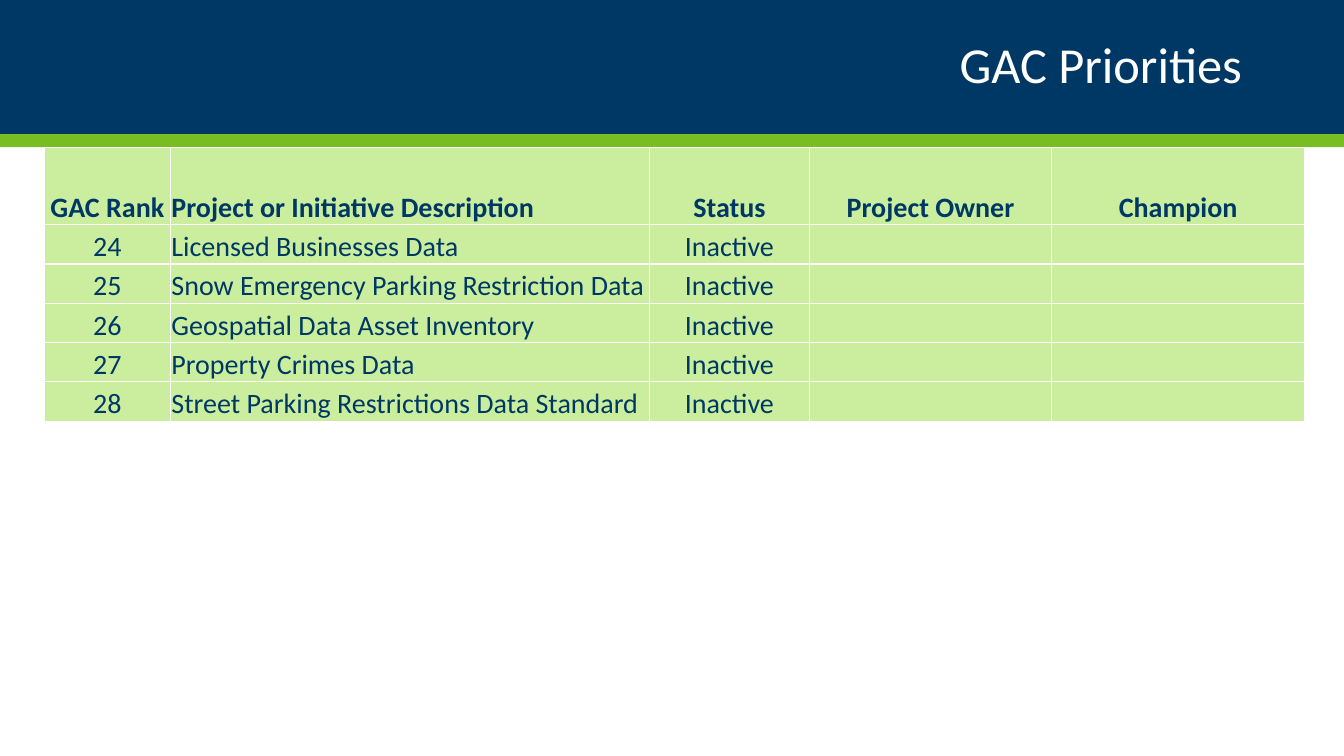
from lxml import etree
from pptx import Presentation
from pptx.dml.color import RGBColor
from pptx.enum.shapes import MSO_SHAPE
from pptx.enum.text import MSO_ANCHOR, PP_ALIGN
from pptx.oxml.ns import qn
from pptx.util import Inches, Pt

RECTANGLE = MSO_SHAPE.RECTANGLE
MIDDLE, BOTTOM = MSO_ANCHOR.MIDDLE, MSO_ANCHOR.BOTTOM
LEFT, CENTER, RIGHT = PP_ALIGN.LEFT, PP_ALIGN.CENTER, PP_ALIGN.RIGHT

NAVY, GREEN, PALE_GREEN, WHITE = "003865", "78BE21", "CAEE9D", "FFFFFF"
FONT = "Calibri"
SLIDE_WIDTH = 13.33
TITLE_ONLY_LAYOUT = 5

HEADERS = ["GAC Rank", "Project or Initiative Description", "Status", "Project Owner", "Champion"]
FIRST_RANK = 24
PROJECTS = [
    "Licensed Businesses Data",
    "Snow Emergency Parking Restriction Data",
    "Geospatial Data Asset Inventory",
    "Property Crimes Data",
    "Street Parking Restrictions Data Standard",
]
COLUMN_WIDTHS = [1.25, 4.75, 1.59, 2.4, 2.51]
HEADER_HEIGHT, ROW_HEIGHT = 0.77, 0.39
DESCRIPTION_COLUMN = 1


def rgb(color):
    return RGBColor.from_string(color)


def format_paragraph(paragraph, size, color, alignment, bold=False):
    paragraph.alignment = alignment
    for run in paragraph.runs:
        run.font.name = FONT
        run.font.size = Pt(size)
        run.font.bold = bold
        run.font.color.rgb = rgb(color)


def add_title(slide, text):
    title = slide.shapes.title
    title.left, title.top = Inches(0.92), Inches(0.17)
    title.width, title.height = Inches(11.5), Inches(1)
    title.text_frame.text = text
    title.text_frame.vertical_anchor = MIDDLE
    paragraph = title.text_frame.paragraphs[0]
    paragraph.line_spacing = 0.9
    format_paragraph(paragraph, 36, WHITE, RIGHT)


def add_band(slide, top, height, color):
    band = slide.shapes.add_shape(RECTANGLE, 0, Inches(top), Inches(SLIDE_WIDTH), Inches(height))
    band.shadow.inherit = False
    band.fill.solid()
    band.fill.fore_color.rgb = rgb(color)
    band.line.fill.background()
    slide.shapes.title.element.addprevious(band.element)


def add_borders(cell, color, width):
    properties = cell._tc.get_or_add_tcPr()
    for side in ("lnL", "lnR", "lnT", "lnB"):
        line = etree.SubElement(properties, qn(f"a:{side}"), w=str(Pt(width)))
        fill = etree.SubElement(line, qn("a:solidFill"))
        etree.SubElement(fill, qn("a:srgbClr"), val=color)


def format_cell(cell, text, alignment, bold):
    cell.text_frame.text = text
    format_paragraph(cell.text_frame.paragraphs[0], 20, NAVY, alignment, bold)
    cell.vertical_anchor = BOTTOM
    cell.margin_left = cell.margin_right = cell.margin_top = Inches(0.01)
    cell.margin_bottom = 0
    add_borders(cell, WHITE, 1)
    cell.fill.solid()
    cell.fill.fore_color.rgb = rgb(PALE_GREEN)


def add_priority_table(slide, rows):
    heights = [HEADER_HEIGHT] + [ROW_HEIGHT] * (len(rows) - 1)
    table = slide.shapes.add_table(
        len(rows), len(COLUMN_WIDTHS), Inches(0.44), Inches(1.46),
        Inches(sum(COLUMN_WIDTHS)), Inches(sum(heights)),
    ).table
    for column, width in zip(table.columns, COLUMN_WIDTHS):
        column.width = Inches(width)
    for row_index, (values, height) in enumerate(zip(rows, heights)):
        table.rows[row_index].height = Inches(height)
        for column_index, value in enumerate(values):
            alignment = LEFT if column_index == DESCRIPTION_COLUMN else CENTER
            format_cell(table.cell(row_index, column_index), value, alignment, row_index == 0)


def main():
    presentation = Presentation()
    presentation.slide_width = Inches(SLIDE_WIDTH)
    presentation.slide_height = Inches(7.5)
    slide = presentation.slides.add_slide(presentation.slide_layouts[TITLE_ONLY_LAYOUT])
    add_title(slide, "GAC Priorities")
    add_band(slide, 0, 1.33, NAVY)
    add_band(slide, 1.33, 0.13, GREEN)
    projects = [
        [str(rank), project, "Inactive", "", ""]
        for rank, project in enumerate(PROJECTS, FIRST_RANK)
    ]
    add_priority_table(slide, [HEADERS] + projects)
    presentation.save("out.pptx")


if __name__ == "__main__":
    main()
